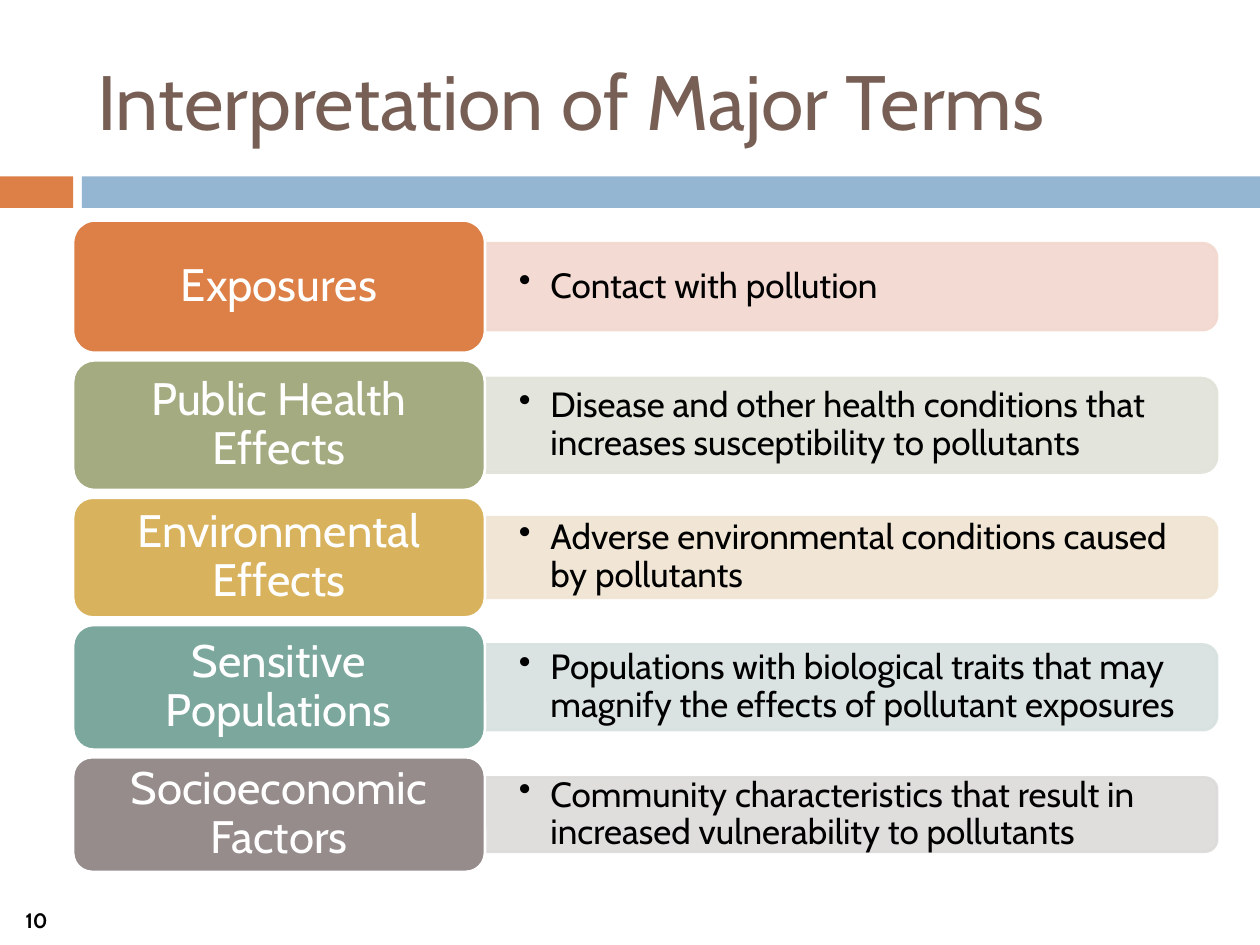
from lxml import etree
from pptx import Presentation
from pptx.dml.color import RGBColor
from pptx.enum.shapes import MSO_SHAPE
from pptx.enum.text import MSO_ANCHOR, PP_ALIGN
from pptx.oxml.ns import qn
from pptx.util import Inches, Pt

RECTANGLE = MSO_SHAPE.RECTANGLE
ROUNDED = MSO_SHAPE.ROUNDED_RECTANGLE
TOP_ROUNDED = MSO_SHAPE.ROUND_2_SAME_RECTANGLE
MIDDLE = MSO_ANCHOR.MIDDLE
LEFT, CENTER = PP_ALIGN.LEFT, PP_ALIGN.CENTER

FONT = "Cabin"
WHITE = RGBColor(0xFF, 0xFF, 0xFF)
BLACK = RGBColor(0x00, 0x00, 0x00)
BROWN = RGBColor(0x77, 0x5F, 0x55)
ORANGE = RGBColor(0xDD, 0x80, 0x47)
BLUE = RGBColor(0x94, 0xB6, 0xD2)

# Term, definition, card colour, bar colour, card height, bar height
TERMS = [
    ("Exposures", "Contact with pollution",
     ORANGE, RGBColor(0xF2, 0xD8, 0xCF), 1.05, 0.69),
    ("Public Health Effects",
     "Disease and other health conditions that increases susceptibility to pollutants",
     RGBColor(0xA5, 0xAB, 0x81), RGBColor(0xE1, 0xE2, 0xD8), 1.03, 0.75),
    ("Environmental Effects",
     "Adverse environmental conditions caused by pollutants",
     RGBColor(0xD8, 0xB2, 0x5C), RGBColor(0xF0, 0xE4, 0xD2), 0.95, 0.64),
    ("Sensitive Populations",
     "Populations with biological traits that may magnify the effects of pollutant exposures",
     RGBColor(0x7B, 0xA7, 0x9D), RGBColor(0xD7, 0xE1, 0xDF), 0.99, 0.68),
    ("Socioeconomic Factors",
     "Community characteristics that result in increased vulnerability to pollutants",
     RGBColor(0x96, 0x8C, 0x8C), RGBColor(0xDD, 0xDA, 0xDA), 0.91, 0.59),
]
ROW_GAP = 0.06
CARD_SHARE = 0.36  # share of a row's width taken by its card


def box(left, top, width, height):
    return [Inches(value) for value in (left, top, width, height)]


def add_filled(slide, kind, place, color, line_color=None):
    shape = slide.shapes.add_shape(kind, *box(*place))
    shape.shadow.inherit = False
    shape.fill.solid()
    shape.fill.fore_color.rgb = color
    if line_color is None:
        shape.line.fill.background()
    else:
        shape.line.color.rgb = line_color
        shape.line.width = Pt(1.5)
    return shape


def write(shape, text, size, color, align, margins, bold=False):
    """Fill a shape with one vertically centred paragraph."""
    frame = shape.text_frame
    frame.text = text
    frame.word_wrap = True
    frame.vertical_anchor = MIDDLE
    frame.margin_left = frame.margin_right = Inches(margins[0])
    frame.margin_top = frame.margin_bottom = Inches(margins[1])
    paragraph = frame.paragraphs[0]
    paragraph.alignment = align
    font = paragraph.runs[0].font
    font.name, font.size, font.bold = FONT, Pt(size), bold
    font.color.rgb = color
    return paragraph


def add_bullet(paragraph):
    properties = paragraph._p.get_or_add_pPr()
    properties.set("marL", str(Inches(0.25)))
    properties.set("indent", str(-Inches(0.25)))
    etree.SubElement(properties, qn("a:buChar")).set("char", "•")


def make_translucent(shape, percent):
    for color in shape._element.spPr.iter(qn("a:srgbClr")):
        etree.SubElement(color, qn("a:alpha")).set("val", str(percent * 1000))


def add_header(slide, left, top, width, height):
    """Title above a two-colour band."""
    title = slide.shapes.title
    title.left, title.top, title.width, title.height = box(
        left + 0.67, top, 8.92, 1.08)
    write(title, "Interpretation of Major Terms", 44, BROWN, LEFT, (0.1, 0.05))
    band_height = 0.25
    band_top = top + height - band_height
    add_filled(slide, RECTANGLE, (left, band_top, 0.58, band_height), ORANGE)
    add_filled(slide, RECTANGLE,
               (left + 0.65, band_top, width - 0.65, band_height), BLUE)


def add_term_row(slide, left, top, width, term):
    """Definition bar on the right, term card on the left."""
    name, definition, card_color, bar_color, height, bar_height = term
    card_width = width * CARD_SHARE
    bar_left, bar_width = left + card_width, width - card_width
    middle = top + height / 2

    # The bar is a top-rounded shape turned so its round side faces right
    bar = add_filled(slide, TOP_ROUNDED,
                     (bar_left + (bar_width - bar_height) / 2,
                      middle - bar_width / 2, bar_height, bar_width),
                     bar_color, bar_color)
    bar.rotation = 90
    make_translucent(bar, 90)

    label = slide.shapes.add_textbox(
        *box(bar_left, middle - bar_height / 2, bar_width - 0.03, bar_height))
    paragraph = write(label, definition, 20, BLACK, LEFT, (0.27, 0.14))
    paragraph.line_spacing = 0.9
    add_bullet(paragraph)

    card = add_filled(slide, ROUNDED, (left, top, card_width, height),
                      card_color, WHITE)
    paragraph = write(card, name, 26, WHITE, CENTER, (0.11, 0.05))
    paragraph.line_spacing = 0.9


def add_term_list(slide, left, top, width):
    for term in TERMS:
        add_term_row(slide, left, top, width, term)
        top += term[4] + ROW_GAP


def add_slide_number(slide, left, top, width, height):
    number = slide.shapes.add_textbox(*box(left, top, width, height))
    write(number, "10", 11.9, BLACK, CENTER, (0.1, 0.05), bold=True)


def main():
    presentation = Presentation()
    presentation.slide_width, presentation.slide_height = Inches(10), Inches(7.5)
    slide = presentation.slides.add_slide(presentation.slide_layouts[5])
    add_header(slide, 0, 0.25, 10, 1.4)
    add_term_list(slide, 0.58, 1.75, 9.08)
    add_slide_number(slide, 0, 7.17, 0.58, 0.27)
    presentation.save("out.pptx")


if __name__ == "__main__":
    main()
